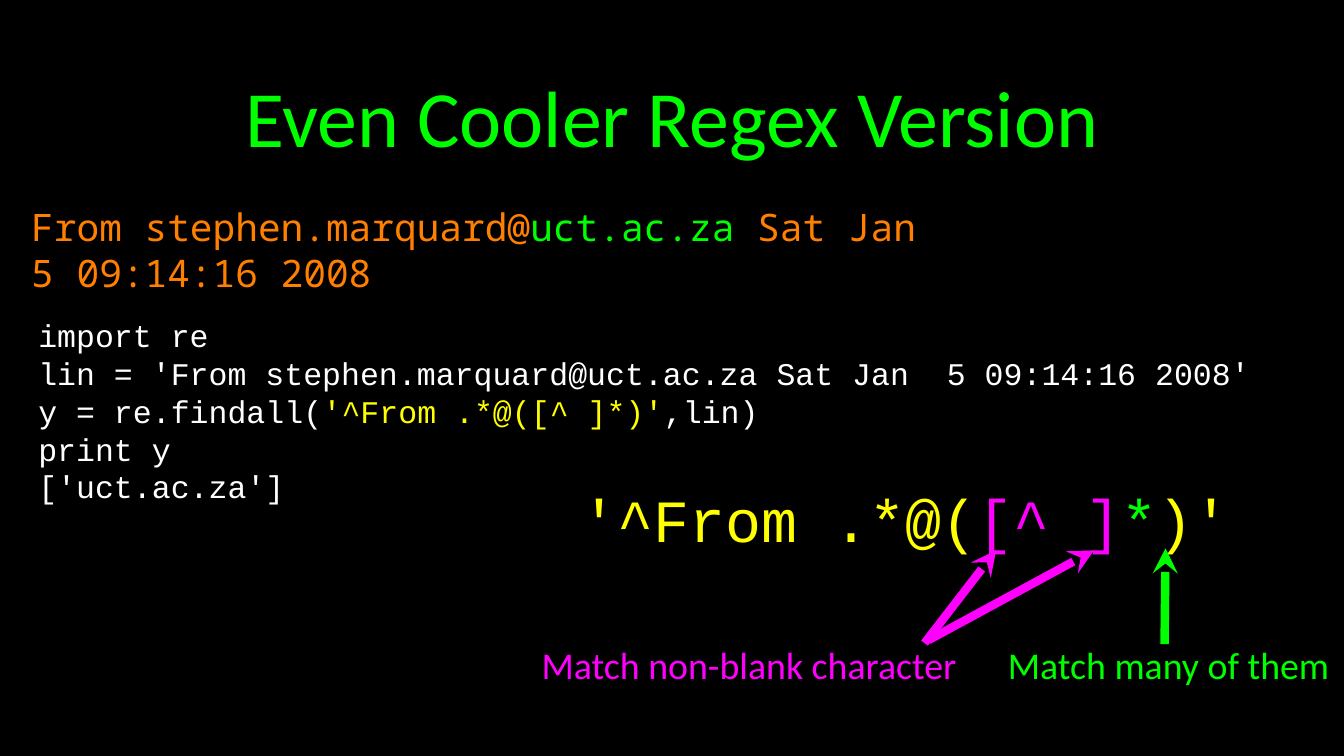
from lxml import etree
from pptx import Presentation
from pptx.dml.color import RGBColor
from pptx.enum.shapes import MSO_CONNECTOR
from pptx.enum.text import MSO_ANCHOR, PP_ALIGN
from pptx.oxml.ns import qn
from pptx.util import Inches, Pt

STRAIGHT = MSO_CONNECTOR.STRAIGHT
MIDDLE = MSO_ANCHOR.MIDDLE
LEFT, CENTER = PP_ALIGN.LEFT, PP_ALIGN.CENTER

BLACK, WHITE = "000000", "FFFFFF"
ORANGE, GREEN, YELLOW, MAGENTA = "FF7F00", "00FF00", "FFFF00", "FF00FF"
SANS, CODE, MONO = "Calibri", "Courier New", "Noto Sans Mono"

# Each text is a list of lines, each line a list of (words, colour).
TITLE = [[("Even Cooler Regex Version", GREEN)]]
MAIL_LINE = [[("From stephen.marquard@", ORANGE), ("uct.ac.za", GREEN),
              (" Sat Jan  5 09:14:16 2008", ORANGE)]]
PROGRAM = [
    [("import re", WHITE)],
    [("lin = 'From stephen.marquard@uct.ac.za Sat Jan  5 09:14:16 2008'", WHITE)],
    [("y = re.findall(", WHITE), ("'^From .*@([^ ]*)'", YELLOW), (",lin)", WHITE)],
    [("print y", WHITE)],
    [("['uct.ac.za']", WHITE)],
]
PATTERN = [[("'^From .*@(", YELLOW), ("[^ ]", MAGENTA), ("*", GREEN), (")'", YELLOW)]]
NON_BLANK = [[("Match non-blank character", MAGENTA)]]
MANY = [[("Match many of them", GREEN)]]

# lines, (left, top, width, height), font, size, alignment, wrap
CAPTION_TOP, CAPTION_HEIGHT = 6.37, 0.45
TEXTS = [
    (MAIL_LINE, (0.31, 2.25, 9.21, 0.45), MONO, 27, LEFT, True),
    (PROGRAM, (0.38, 3.15, 12.93, 1.85), CODE, 22.5, LEFT, True),
    (PATTERN, (5.77, 4.78, 6.47, 0.72), CODE, 42.8, LEFT, False),
    (NON_BLANK, (5.36, CAPTION_TOP, 4.14, CAPTION_HEIGHT), SANS, 27, CENTER, False),
    (MANY, (9.98, CAPTION_TOP, 3.22, CAPTION_HEIGHT), SANS, 27, CENTER, False),
]

# pointed end, plain end, colour
ARROWS = [
    ((9.88, 5.46), (9.17, 6.38), MAGENTA),
    ((11.56, 5.44), (11.55, 6.39), GREEN),
    ((10.85, 5.46), (9.21, 6.35), MAGENTA),
]


def rgb(value):
    return RGBColor.from_string(value)


def write(box, lines, font, size, alignment, wrap=True, margin=0):
    frame = box.text_frame
    frame.word_wrap = wrap
    frame.vertical_anchor = MIDDLE
    frame.margin_left = frame.margin_right = Inches(margin)
    frame.margin_top = frame.margin_bottom = Inches(margin)
    frame.text = "\n".join("" for _ in lines)
    for para, line in zip(frame.paragraphs, lines):
        para.alignment = alignment
        for words, colour in line:
            span = para.add_run()
            span.text = words
            span.font.name = font
            span.font.size = Pt(size)
            span.font.color.rgb = rgb(colour)


def add_arrow(slide, tip, start, colour):
    arrow = slide.shapes.add_connector(
        STRAIGHT, *(Inches(value) for value in tip + start))
    arrow.line.color.rgb = rgb(colour)
    arrow.line.width = Pt(6)
    etree.SubElement(arrow.line._get_or_add_ln(), qn("a:headEnd"), type="stealth")
    etree.SubElement(arrow._element.spPr, qn("a:effectLst"))


def main():
    deck = Presentation()
    deck.slide_width, deck.slide_height = Inches(13.33), Inches(7.5)
    slide = deck.slides.add_slide(deck.slide_layouts[5])
    slide.background.fill.solid()
    slide.background.fill.fore_color.rgb = rgb(BLACK)

    title = slide.shapes.title
    title.left, title.top = Inches(0.95), Inches(0.2)
    title.width, title.height = Inches(11.43), Inches(1.89)
    write(title, TITLE, SANS, 57, CENTER, margin=0.04)

    for lines, place, font, size, alignment, wrap in TEXTS:
        box = slide.shapes.add_textbox(*(Inches(value) for value in place))
        write(box, lines, font, size, alignment, wrap)
    for tip, start, colour in ARROWS:
        add_arrow(slide, tip, start, colour)
    deck.save("out.pptx")


if __name__ == "__main__":
    main()
